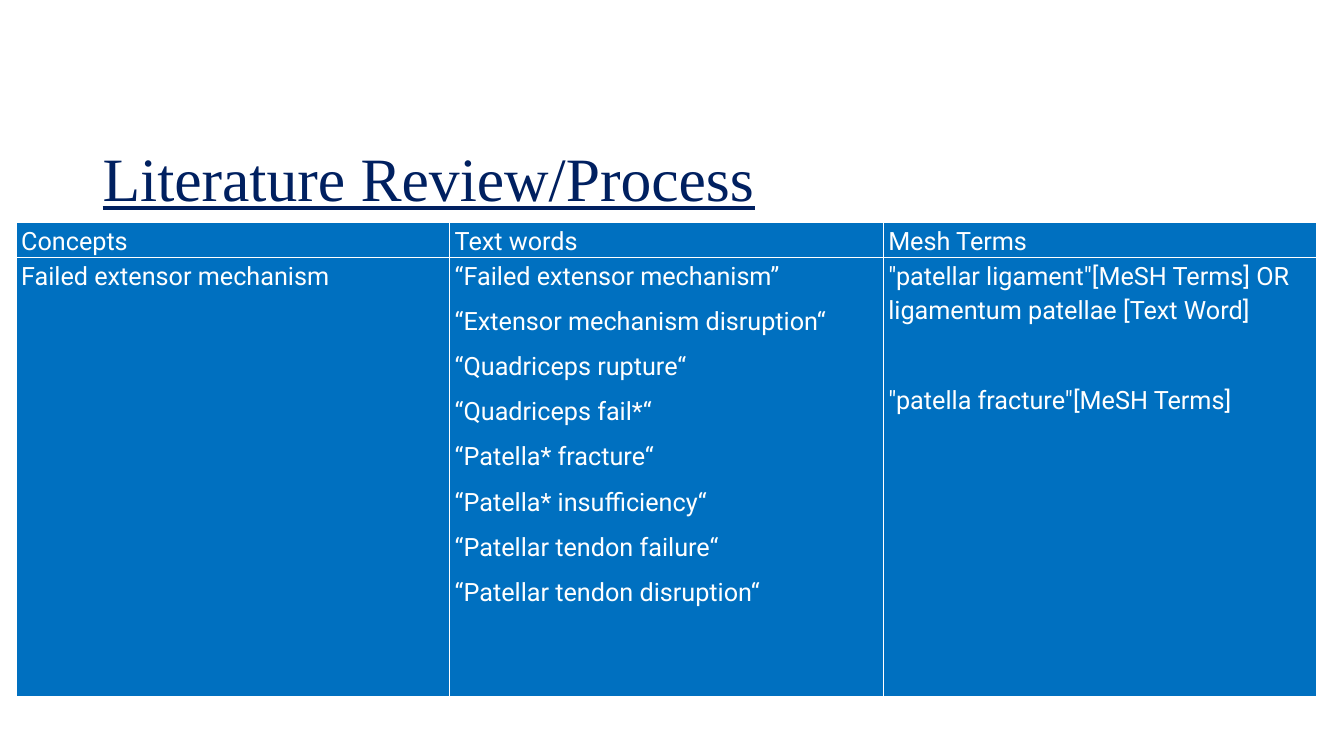
from lxml import etree
from pptx import Presentation
from pptx.dml.color import RGBColor
from pptx.enum import text
from pptx.oxml import ns
from pptx.util import Inches, Pt

# Content: each cell is a list of (text, space before in points)
TITLE = "Literature Review/Process"
ROWS = [
    [[("Concepts", 0)], [("Text words", 0)], [("Mesh Terms", 0)]],
    [
        [("Failed extensor mechanism", 0)],
        [
            ("“Failed extensor mechanism”", 0),
            ("“Extensor mechanism disruption“", 0),
            ("“Quadriceps rupture“", 0),
            ("“Quadriceps fail*“", 0),
            ("“Patella* fracture“", 0),
            ("“Patella* insufficiency“", 0),
            ("“Patellar tendon failure“", 0),
            ("“Patellar tendon disruption“", 0),
        ],
        [
            ('"patellar ligament"[MeSH Terms] OR ligamentum patellae [Text Word]', 0),
            ('"patella fracture"[MeSH Terms]', 32),
        ],
    ],
]
NAVY, BLUE, WHITE = "002060", "0070C0", "FFFFFF"
ROW_HEIGHTS = [0.33, 4.36]
TABLE_LEFT, TABLE_TOP, COLUMN_WIDTH = 0.16, 2.21, 4.3


def color(value):
    return RGBColor.from_string(value)


def set_font(paragraph, name, size, value):
    paragraph.font.name = name
    paragraph.font.size = Pt(size)
    paragraph.font.color.rgb = color(value)


def add_borders(cell, value, points):
    properties = cell._tc.get_or_add_tcPr()
    for side in ("a:lnL", "a:lnR", "a:lnT", "a:lnB"):
        line = etree.SubElement(properties, ns.qn(side), w=str(Pt(points)))
        fill = etree.SubElement(line, ns.qn("a:solidFill"))
        etree.SubElement(fill, ns.qn("a:srgbClr"), val=value)


def fill_cell(cell, lines):
    cell.margin_left = cell.margin_right = Inches(0.05)
    cell.margin_top = cell.margin_bottom = 0
    add_borders(cell, WHITE, 1)
    cell.fill.solid()
    cell.fill.fore_color.rgb = color(BLUE)
    frame = cell.text_frame
    frame.text = "\n".join(line for line, _ in lines)
    for paragraph, (_, before) in zip(frame.paragraphs, lines):
        paragraph.line_spacing = 1.15
        paragraph.space_before = Pt(before)
        paragraph.space_after = Pt(8 if len(lines) > 1 else 0)
        set_font(paragraph, "Roboto", 18, WHITE)


presentation = Presentation()
presentation.slide_width = Inches(13.33)
presentation.slide_height = Inches(7.5)
slide = presentation.slides.add_slide(presentation.slide_layouts[6])

# Title
title = slide.shapes.add_textbox(Inches(0.92), Inches(1.39), Inches(11.5), Inches(0.82))
title.text_frame.word_wrap = True
title.text_frame.vertical_anchor = text.MSO_ANCHOR.MIDDLE
heading = title.text_frame.paragraphs[0]
heading.text = TITLE
heading.line_spacing = 0.9
set_font(heading, "Times New Roman", 44, NAVY)
heading.font.underline = True

# Search term table
columns = len(ROWS[0])
table = slide.shapes.add_table(
    len(ROWS), columns, Inches(TABLE_LEFT), Inches(TABLE_TOP),
    Inches(COLUMN_WIDTH * columns), Inches(sum(ROW_HEIGHTS))).table
for row, height in zip(table.rows, ROW_HEIGHTS):
    row.height = Inches(height)
for column in table.columns:
    column.width = Inches(COLUMN_WIDTH)
for row, contents in zip(table.rows, ROWS):
    for cell, lines in zip(row.cells, contents):
        fill_cell(cell, lines)

presentation.save("out.pptx")
